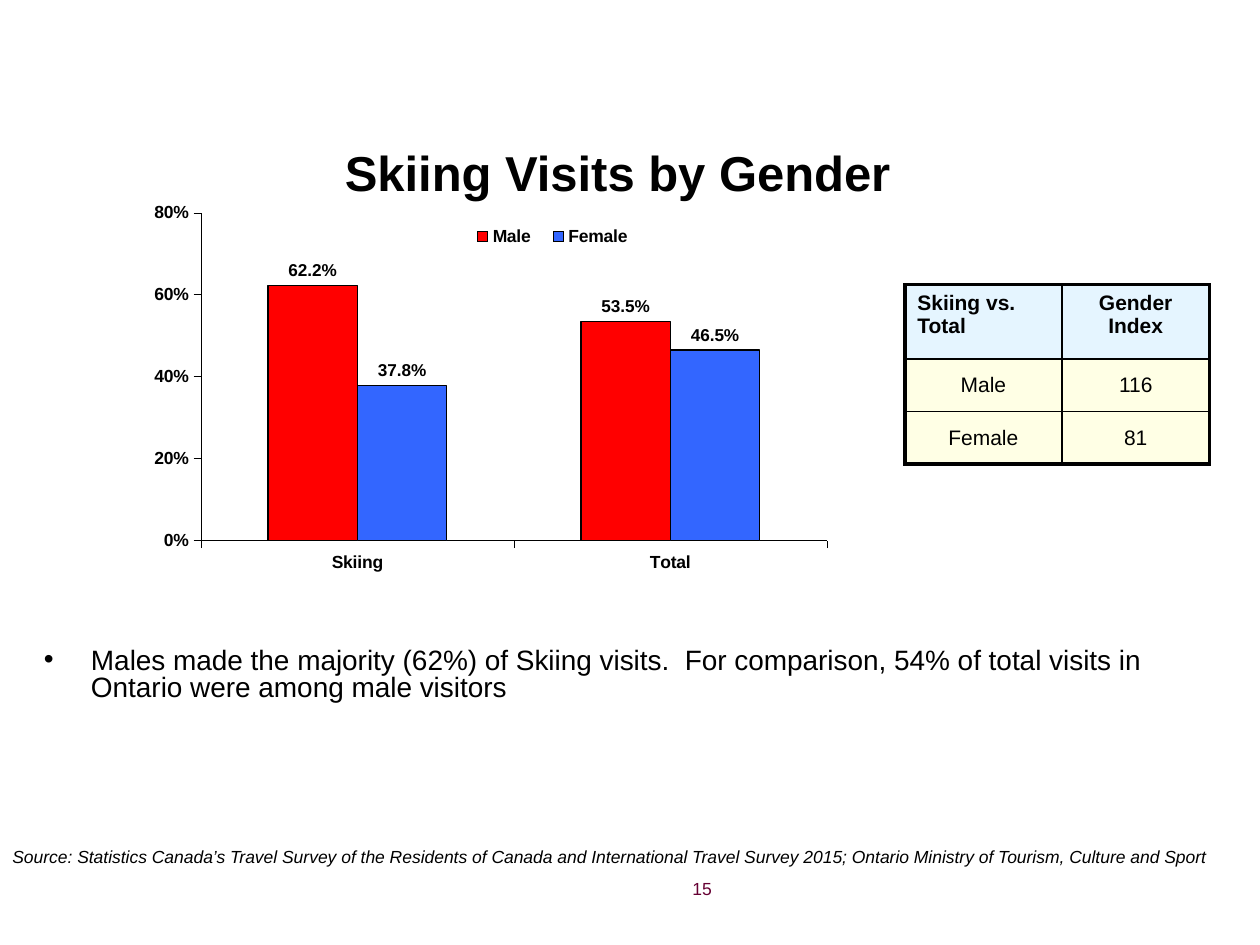
from lxml import etree
from pptx import Presentation
from pptx import util as u
from pptx.chart.data import CategoryChartData
from pptx.dml.color import RGBColor
from pptx.enum import chart as ch, text
from pptx.oxml import ns, xmlchemy

BLACK = RGBColor(0x00, 0x00, 0x00)
RED = RGBColor(0xFF, 0x00, 0x00)
BLUE = RGBColor(0x33, 0x66, 0xFF)
PLUM = RGBColor(0x66, 0x00, 0x33)
SKY = RGBColor(0xCC, 0xEC, 0xFF)
CREAM = RGBColor(0xFF, 0xFF, 0xCC)


def style(font, size, color=BLACK, **more):
    fmt = dict(name="Arial", size=u.Pt(size), bold=False, **more)
    if "b" in fmt:
        fmt["bold"] = fmt.pop("b")
    for key, value in fmt.items():
        setattr(font, key, value)
    font.color.rgb = color


def place(sp, left, top, width, height):
    box = dict(left=left, top=top, width=width, height=height)
    for key, value in box.items():
        setattr(sp, key, u.Cm(value))


prs = Presentation()
prs.slide_width, prs.slide_height = u.Cm(25.4), u.Cm(19.05)
s = prs.slides.add_slide(prs.slide_layouts[1])

title, body = s.shapes.title, s.placeholders[1]
place(title, 1.02, 2.74, 22.86, 1.9)
place(body, 0.63, 12.95, 24.13, 4.24)
title.text_frame.text = "Skiing Visits by Gender"
body.text_frame.text = (
    "Males made the majority (62%) of Skiing visits.  For comparison, "
    "54% of total visits in Ontario were among male visitors"
)
for sp in (title, body):
    tf = sp.text_frame
    tf.auto_size = text.MSO_AUTO_SIZE.NONE
    tf.vertical_anchor = text.MSO_ANCHOR.TOP
p = title.text_frame.paragraphs[0]
p.alignment = text.PP_ALIGN.CENTER
style(p.runs[0].font, 28, b=True)
p = body.text_frame.paragraphs[0]
p.line_spacing = 0.8
p.space_before = u.Pt(0)
pPr = p._p.get_or_add_pPr()
pPr.set("marL", str(u.Cm(0.95)))
pPr.set("indent", str(u.Cm(-0.95)))
etree.SubElement(pPr, ns.qn("a:buChar")).set("char", "•")
style(p.runs[0].font, 16)

rows = [("Skiing vs. Total", "Gender Index"), ("Male", "116"), ("Female", "81")]
frame = s.shapes.add_table(3, 2, u.Cm(18.24), u.Cm(5.74), u.Cm(6.15), u.Cm(3.61))
table = frame.table
for col, width in zip(table.columns, (3.17, 2.97)):
    col.width = u.Cm(width)
for row, height in zip(table.rows, (1.5, 1.06, 1.05)):
    row.height = u.Cm(height)
for i, row in enumerate(rows):
    for j, value in enumerate(row):
        cell = table.cell(i, j)
        cell.text = value
        p = cell.text_frame.paragraphs[0]
        if i or j:
            p.alignment = text.PP_ALIGN.CENTER
        if i:
            cell.vertical_anchor = text.MSO_ANCHOR.MIDDLE
            for side in ("left", "right", "top", "bottom"):
                setattr(cell, f"margin_{side}", 0)
        style(p.runs[0].font, 12, b=i == 0)
        cell.fill.solid()
        cell.fill.fore_color.rgb = CREAM if i else SKY
        tcPr = cell._tc.get_or_add_tcPr()
        color = tcPr.find(".//" + ns.qn("a:srgbClr"))
        etree.SubElement(color, ns.qn("a:alpha")).set("val", "50000")
        outer = dict(lnL=j == 0, lnR=j == 1, lnT=i == 0, lnB=i == 2)
        for k, (side, edge) in enumerate(outer.items()):
            ln = xmlchemy.OxmlElement(f"a:{side}")
            ln.set("w", str(u.Pt(2.25 if edge else 1)))
            fill = etree.SubElement(ln, ns.qn("a:solidFill"))
            etree.SubElement(fill, ns.qn("a:srgbClr")).set("val", str(BLACK))
            tcPr.insert(k, ln)

data = CategoryChartData(number_format="0.0%")
data.categories = ["Skiing", "Total"]
data.add_series("Male", (0.622, 0.535))
data.add_series("Female", (0.378, 0.465))
chart = s.shapes.add_chart(
    ch.XL_CHART_TYPE.COLUMN_CLUSTERED,
    u.Cm(2.11), u.Cm(3.81), u.Cm(19.41), u.Cm(9.58), data,
).chart
chart.has_title = False
style(chart.font, 10, b=True)
chart.has_legend = True
legend = chart.legend
legend.position = ch.XL_LEGEND_POSITION.RIGHT
legend.include_in_layout = False
style(legend.font, 10, b=True)
for axis in (chart.category_axis, chart.value_axis):
    axis.has_major_gridlines = False
    axis.major_tick_mark = ch.XL_TICK_MARK.OUTSIDE
    axis.format.line.width = u.Pt(0.19)
    axis.format.line.color.rgb = BLACK
    style(axis.tick_labels.font, 10, b=True)
for key, value in dict(minimum_scale=0, maximum_scale=0.8, major_unit=0.2).items():
    setattr(chart.value_axis, key, value)
labels = chart.value_axis.tick_labels
labels.number_format, labels.number_format_is_linked = "0%", False
plot = chart.plots[0]
for key, value in dict(gap_width=150, overlap=0, vary_by_categories=False).items():
    setattr(plot, key, value)
for series, color in zip(plot.series, (RED, BLUE)):
    series.format.fill.solid()
    series.format.fill.fore_color.rgb = color
    series.format.line.width = u.Pt(0.75)
    series.format.line.color.rgb = BLACK
    labels = series.data_labels
    labels.show_value = True
    labels.number_format, labels.number_format_is_linked = "0.0%", False
    labels.position = ch.XL_LABEL_POSITION.OUTSIDE_END
    style(labels.font, 9.8, b=True)

plot_area = chart._chartSpace.chart.plotArea
layouts = (
    (plot_area, 0, dict(layoutTarget="inner"), (0.1, 0.05, 0.65, 0.69)),
    (legend._element, 1, {}, (0.37, 0.07, 0.19, 0.06)),
)
for parent, index, target, box in layouts:
    for old in parent.findall(ns.qn("c:layout")):
        parent.remove(old)
    layout = xmlchemy.OxmlElement("c:layout")
    manual = etree.SubElement(layout, ns.qn("c:manualLayout"))
    values = dict(target, xMode="edge", yMode="edge", **dict(zip("xywh", box)))
    for key, value in values.items():
        etree.SubElement(manual, ns.qn(f"c:{key}")).set("val", str(value))
    parent.insert(index, layout)

source = (
    "Source: Statistics Canada’s Travel Survey of the Residents of Canada and "
    "International Travel Survey 2015; Ontario Ministry of Tourism, Culture and Sport"
)
notes = (
    ("15", (12.9, 17.58, 1.7, 0.89), text.PP_ALIGN.RIGHT, PLUM, False),
    (source, (0, 16.94, 24.89, 0.69), text.PP_ALIGN.LEFT, BLACK, True),
)
for words, box, align, color, italic in notes:
    sp = s.shapes.add_textbox(*map(u.Cm, box))
    tf = sp.text_frame
    tf.word_wrap = True
    p = tf.paragraphs[0]
    p.alignment = align
    r = p.add_run()
    r.text = words
    style(r.font, 10, color, italic=italic)

prs.save("out.pptx")
